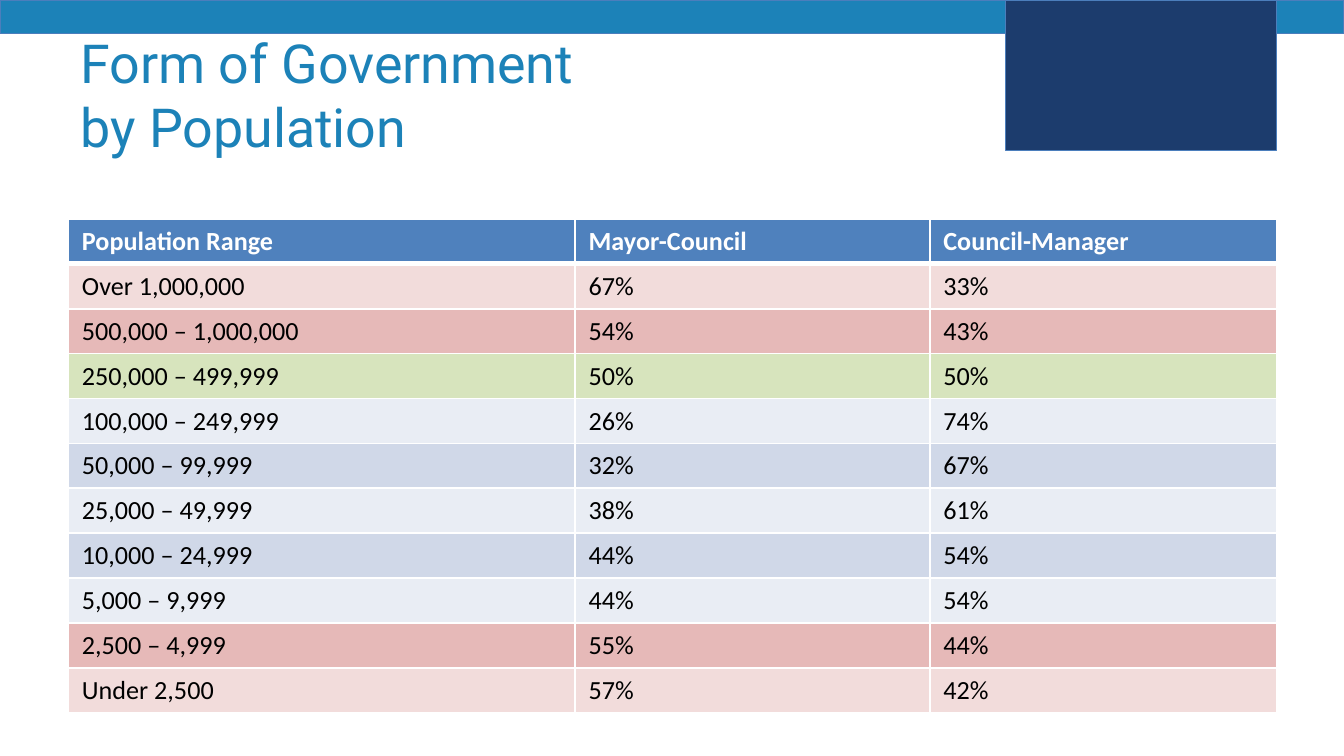
from lxml.etree import SubElement
from pptx import Presentation
from pptx.dml.color import RGBColor
from pptx.enum.shapes import MSO_SHAPE
from pptx.enum.text import MSO_ANCHOR
from pptx.oxml.ns import qn
from pptx.util import Inches, Pt

BLUE = RGBColor(0x1C, 0x82, 0xB8)
NAVY = RGBColor(0x1C, 0x3C, 0x6D)
EDGE = RGBColor(0x4B, 0x7E, 0xBC)
HEAD = RGBColor(0x4F, 0x81, 0xBD)
PINK = RGBColor(0xF2, 0xDC, 0xDB)
ROSE = RGBColor(0xE6, 0xB9, 0xB8)
GREEN = RGBColor(0xD7, 0xE4, 0xBD)
PALE = RGBColor(0xE9, 0xED, 0xF4)
MIST = RGBColor(0xD0, 0xD8, 0xE8)
WHITE = RGBColor(0xFF, 0xFF, 0xFF)
BLACK = RGBColor(0, 0, 0)

# Content
TITLE = "Form of Government\vby Population"
BARS = [  # left, top, width, height, fill
    (0, 0, 10, 0.25, BLUE),
    (7.48, 0, 2.02, 1.12, NAVY),
]
ROWS = [  # fill, range, mayor-council, council-manager
    (HEAD, "Population Range", "Mayor-Council", "Council-Manager"),
    (PINK, "Over 1,000,000", "67%", "33%"),
    (ROSE, "500,000 – 1,000,000", "54%", "43%"),
    (GREEN, "250,000 – 499,999", "50%", "50%"),
    (PALE, "100,000 – 249,999", "26%", "74%"),
    (MIST, "50,000 – 99,999", "32%", "67%"),
    (PALE, "25,000 – 49,999", "38%", "61%"),
    (MIST, "10,000 – 24,999", "44%", "54%"),
    (PALE, "5,000 – 9,999", "44%", "54%"),
    (ROSE, "2,500 – 4,999", "55%", "44%"),
    (PINK, "Under 2,500", "57%", "42%"),
]
COLS = [3.77, 2.64, 2.58]
HIGH = 3.67
RULES = {"a:lnL": 1, "a:lnR": 1, "a:lnT": 1, "a:lnB": 3}

# Text formats
TITLE_FONT = {"name": "Roboto", "size": Pt(28.8)}
HEAD_FONT = {"name": "Calibri", "size": Pt(14), "bold": True}
BODY_FONT = {**HEAD_FONT, "bold": False}


def style(frame, look, color):
    for run in frame.paragraphs[0].runs:
        for key, value in look.items():
            setattr(run.font, key, value)
        run.font.color.rgb = color


def edge(cell):
    """Draw white rules round a cell; they must precede its fill."""
    props = cell._tc.get_or_add_tcPr()
    for tag, width in RULES.items():
        line = SubElement(props, qn(tag), w=str(Pt(width)))
        fill = SubElement(line, qn("a:solidFill"))
        SubElement(fill, qn("a:srgbClr"), val=str(WHITE))


deck = Presentation()
deck.slide_width = Inches(10)
deck.slide_height = Inches(10) * 9 // 16
slide = deck.slides.add_slide(deck.slide_layouts[6])

# Top band and corner block
for *place, fill in BARS:
    bar = slide.shapes.add_shape(MSO_SHAPE.RECTANGLE, *map(Inches, place))
    bar.shadow.inherit = False
    bar.fill.solid()
    bar.fill.fore_color.rgb = fill
    bar.line.color.rgb = EDGE
    bar.line.width = Pt(0.75)

# Title
box = slide.shapes.add_textbox(*map(Inches, (0.5, 0.23, 8.89, 0.94)))
frame = box.text_frame
frame.word_wrap = True
frame.vertical_anchor = MSO_ANCHOR.MIDDLE
frame.text = TITLE
style(frame, TITLE_FONT, BLUE)

# Table: its default style rules the body rows in white
table = slide.shapes.add_table(
    len(ROWS), len(COLS), Inches(0.51), Inches(1.63),
    Inches(sum(COLS)), Inches(HIGH)).table
for col, width in zip(table.columns, COLS):
    col.width = Inches(width)
for i, (fill, *words) in enumerate(ROWS):
    look, color = (BODY_FONT, BLACK) if i else (HEAD_FONT, WHITE)
    table.rows[i].height = Inches(HIGH / len(ROWS))
    for cell, word in zip(table.rows[i].cells, words):
        if i == 0:
            edge(cell)
        cell.fill.solid()
        cell.fill.fore_color.rgb = fill
        cell.text = word
        style(cell.text_frame, look, color)

deck.save("out.pptx")
